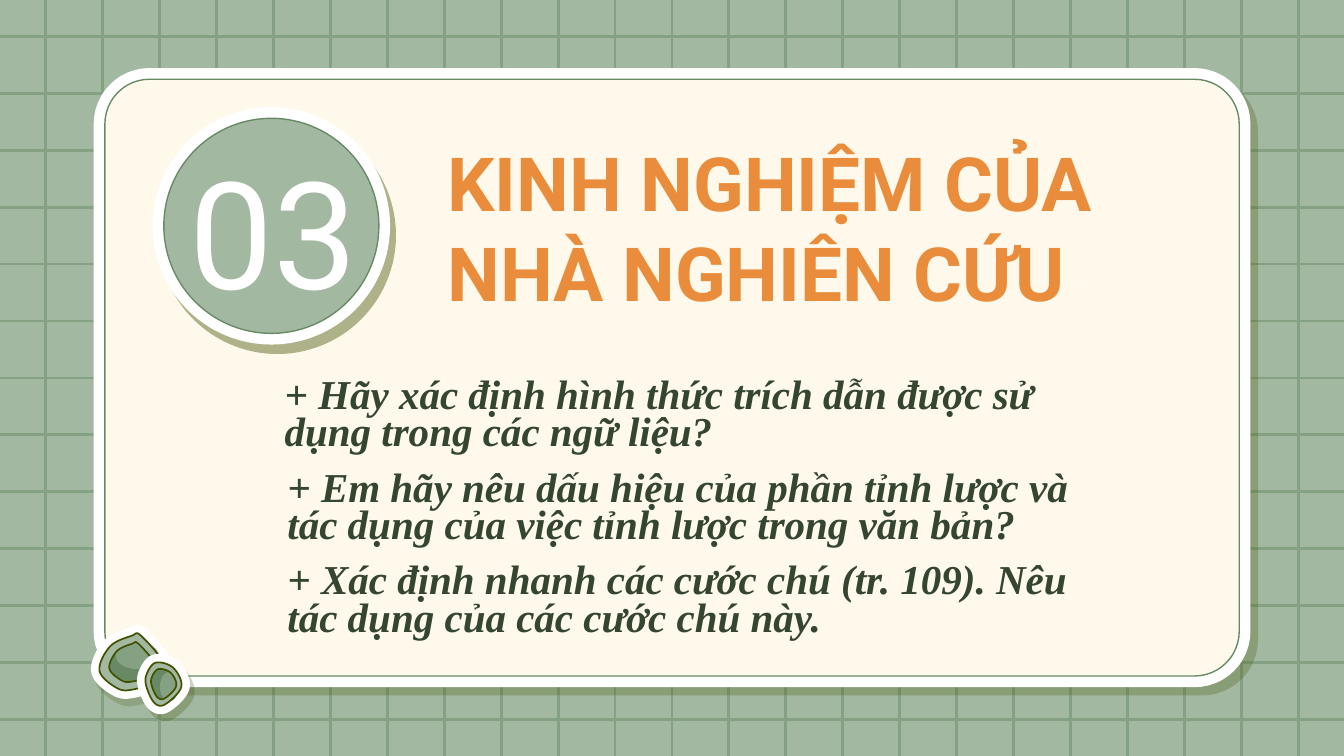
"""Build the section slide: a framed panel with a number, a title and three questions."""
from dataclasses import dataclass
from typing import Any, NamedTuple, Optional

from lxml.etree import SubElement
from pptx import Presentation
from pptx.dml.color import RGBColor
from pptx.enum.shapes import MSO_CONNECTOR, MSO_SHAPE
from pptx.enum.text import MSO_ANCHOR, MSO_AUTO_SIZE, PP_ALIGN
from pptx.oxml.ns import qn
from pptx.util import Pt


@dataclass(frozen=True)
class Theme:
    """Colours, fonts and type sizes."""
    sage: str = "A3B8A1"
    grid: str = "85A183"
    moss: str = "678A64"
    olive: str = "415100"
    cream: str = "FFF7E4"
    paper: str = "FFF9EB"
    white: str = "FFFFFF"
    orange: str = "E98C3B"
    ink: str = "344532"
    head_font: str = "Roboto"
    body_font: str = "Times New Roman"
    title_size: int = 40
    number_size: int = 80
    body_size: int = 22
    body_leading: int = 20


class Box(NamedTuple):
    """Position and size in points."""
    x: float
    y: float
    w: float
    h: float


class Shadow(NamedTuple):
    """Strength in percent, distance in points, direction in degrees."""
    alpha: int
    dist: float
    angle: int


class Frame(NamedTuple):
    """A shape with a wide white border and a thin inner line."""
    kind: MSO_SHAPE
    box: Box
    under: str
    over: str
    shadow: Shadow
    radius: Optional[float] = None


class Pebble(NamedTuple):
    """Rim points around a centre, and the oval highlight."""
    center: tuple
    rim: list
    light: Box
    shadow: Shadow


T = Theme()
STEP = 30.5
WIDTH, HEIGHT = 720, 405

FRAMES = [
    Frame(MSO_SHAPE.ROUNDED_RECTANGLE, Box(56.2, 42.5, 607.7, 319.7), T.cream, T.paper, Shadow(26, 6, 47), 0.075),
    Frame(MSO_SHAPE.OVAL, Box(87.8, 63.4, 115.2, 115.2), T.orange, T.sage, Shadow(41, 6, 58)),
]

PEBBLES = [
    Pebble((71, 355), [(75.6, 340.6), (70.6, 340.6), (59, 346.3), (53.3, 359.3), (62.6, 368.6), (71.3, 369.4),
                       (85.7, 364.3), (88.6, 356.4)], Box(62, 344, 23, 14.5), Shadow(20, 4.5, 63)),
    Pebble((88, 366.5), [(97.2, 367.9), (92.9, 357.8), (83.5, 355), (78.5, 361.4), (78.5, 367.9), (82.8, 376.6),
                         (88.6, 377.3)], Box(85.7, 360, 10, 15.8), Shadow(25, 4.5, 56)),
]

QUESTIONS = [
    "+ Hãy xác định hình thức trích dẫn được sử dụng trong các ngữ liệu?",
    "+ Em hãy nêu dấu hiệu của phần tỉnh lược và tác dụng của việc tỉnh lược trong văn bản?",
    "+ Xác định nhanh các cước chú (tr. 109). Nêu tác dụng của các cước chú này.",
]


def put(obj: Any, values: dict) -> None:
    """Set every named attribute on the object."""
    for name, value in values.items():
        setattr(obj, name, value)


def emu(box: Box) -> list:
    """Turn a box in points into lengths."""
    return [Pt(v) for v in box]


def paint(sp: Any, fill: str, line: Optional[str] = None, width: float = 0,
          shadow: Optional[Shadow] = None) -> None:
    """Give a shape its fill, line and shadow."""
    sp.shadow.inherit = False
    sp.fill.solid()
    sp.fill.fore_color.rgb = RGBColor.from_string(fill)
    if line:
        sp.line.color.rgb = RGBColor.from_string(line)
        sp.line.width = Pt(width)
    else:
        sp.line.fill.background()
    if shadow:
        effects = sp.element.spPr.find(qn("a:effectLst"))
        outer = SubElement(effects, qn("a:outerShdw"), blurRad="0", dist=str(Pt(shadow.dist)),
                           dir=str(shadow.angle * 60000), algn="bl", rotWithShape="0")
        color = SubElement(outer, qn("a:srgbClr"), val=T.olive)
        SubElement(color, qn("a:alpha"), val=str(shadow.alpha * 1000))


def grid_line(s: Any, x1: float, y1: float, x2: float, y2: float) -> None:
    """Draw one line of the background grid."""
    c = s.shapes.add_connector(MSO_CONNECTOR.STRAIGHT, Pt(x1), Pt(y1), Pt(x2), Pt(y2))
    c.line.color.rgb = RGBColor.from_string(T.grid)
    c.line.width = Pt(1.5)
    SubElement(c.element.spPr, qn("a:effectLst"))


def draw_frame(s: Any, frame: Frame) -> None:
    """Draw the bordered shape and its thin-lined face."""
    for style in ((frame.under, T.white, 12, frame.shadow), (frame.over, T.moss, 0.75)):
        sp = s.shapes.add_shape(frame.kind, *emu(frame.box))
        if frame.radius:
            sp.adjustments[0] = frame.radius
        paint(sp, *style)


def smooth(pts: list, steps: int = 8) -> list:
    """Run a closed Catmull-Rom curve through the points."""
    out = []
    for i in range(len(pts)):
        quad = [pts[(i + k) % len(pts)] for k in (-1, 0, 1, 2)]
        for k in range(steps):
            t = k / steps
            out.append(tuple(b + t * (c - a + t * (2 * a - 5 * b + 4 * c - d + t * (3 * b - a - 3 * c + d))) / 2
                             for a, b, c, d in zip(*quad)))
    return out


def outline(s: Any, pebble: Pebble, *scales: float) -> Any:
    """Build one freeform from the rim at each scale."""
    curve = smooth(pebble.rim)
    contours = [[tuple(Pt(c + (v - c) * k) for v, c in zip(p, pebble.center)) for p in curve] for k in scales]
    builder = s.shapes.build_freeform(*contours[0][0])
    for pts in contours:
        builder.move_to(*pts[0])
        builder.add_line_segments(pts[1:], close=True)
    return builder.convert_to_shape()


def draw_pebble(s: Any, pebble: Pebble) -> None:
    """Draw a pebble from its white border up to its dark rim."""
    paint(outline(s, pebble, 1, 0.7), T.sage, T.white, 9, pebble.shadow)
    paint(outline(s, pebble, 0.85), T.moss)
    paint(s.shapes.add_shape(MSO_SHAPE.OVAL, *emu(pebble.light)), T.grid)
    paint(outline(s, pebble, 1, 0.7), T.sage, T.olive, 0.9)


def write(sp: Any, text: str, color: str, font: dict, para: dict, frame: dict) -> None:
    """Fill a text shape with one formatted paragraph."""
    tf = sp.text_frame
    put(tf, {"word_wrap": True, "auto_size": MSO_AUTO_SIZE.NONE, **frame})
    p = tf.paragraphs[0]
    put(p, para)
    r = p.add_run()
    r.text = text
    put(r.font, font)
    r.font.color.rgb = RGBColor.from_string(color)


def main() -> None:
    """Build and save the slide."""
    prs = Presentation()
    put(prs, {"slide_width": Pt(WIDTH), "slide_height": Pt(HEIGHT)})
    s = prs.slides.add_slide(prs.slide_layouts[5])
    s.background.fill.solid()
    s.background.fill.fore_color.rgb = RGBColor.from_string(T.sage)
    for i in range(23):
        grid_line(s, 24.5 + i * STEP, 0, 24.5 + i * STEP, HEIGHT)
    for i in range(13):
        grid_line(s, 0, 19.5 + i * STEP, WIDTH, 19.5 + i * STEP)
    for frame in FRAMES:
        draw_frame(s, frame)

    title = s.shapes.title
    put(title, dict(zip(("left", "top", "width", "height"), emu(Box(232.6, 73.4, 410.4, 99.4)))))
    write(title, "KINH NGHIỆM CỦA NHÀ NGHIÊN CỨU", T.orange,
          {"name": T.head_font, "size": Pt(T.title_size), "bold": True}, {"alignment": PP_ALIGN.LEFT},
          {"vertical_anchor": MSO_ANCHOR.TOP, "margin_top": 0, "margin_bottom": Pt(7.2)})
    title.element.getparent().append(title.element)
    write(s.shapes.add_textbox(*emu(Box(90.7, 83.5, 111.6, 79.2))), "03", T.white,
          {"name": T.head_font, "size": Pt(T.number_size)}, {"alignment": PP_ALIGN.CENTER},
          {"vertical_anchor": MSO_ANCHOR.MIDDLE, "margin_top": Pt(7.2), "margin_bottom": Pt(7.2)})
    for pebble in PEBBLES:
        draw_pebble(s, pebble)
    for i, text in enumerate(QUESTIONS):
        box = Box(146.9 if i else 145.4, 200.2 + i * 49.65, 455, 48)
        write(s.shapes.add_textbox(*emu(box)), text, T.ink,
              {"name": T.body_font, "size": Pt(T.body_size), "bold": True, "italic": True},
              {"line_spacing": Pt(T.body_leading)}, {})
    prs.save("out.pptx")


if __name__ == "__main__":
    main()
